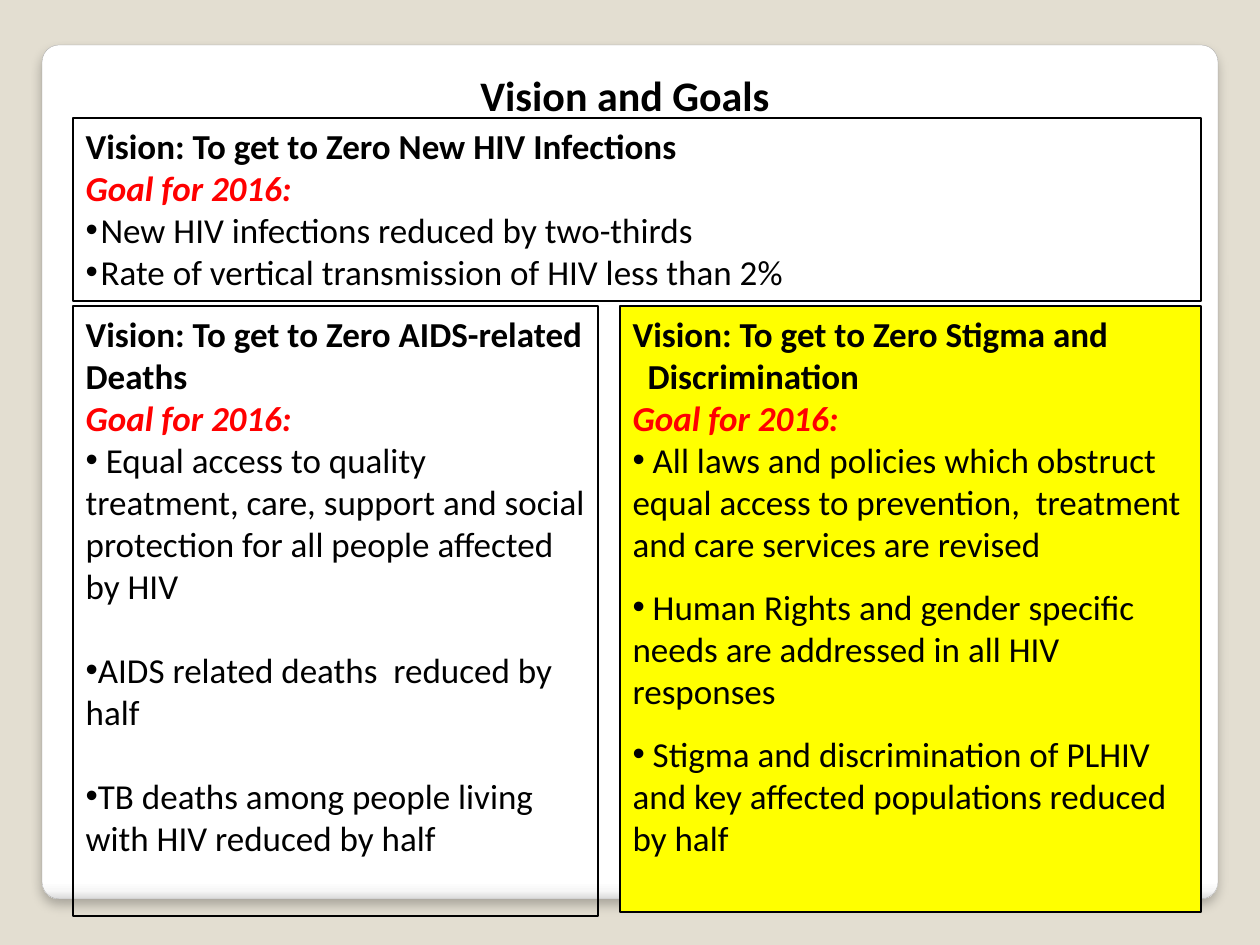
from lxml import etree
from pptx import Presentation
from pptx import util as u
from pptx.dml.color import RGBColor
from pptx.enum import shapes, text
from pptx.oxml import ns, parse_xml

PX = 914400 / 126
FONT = "Calibri"
COLORS = {
    "page": "E3DED1", "card": "FFFFFF", "card_low": "F7F7F7",
    "card_edge": "DADADA", "card_line": "A4A4A4",
    "ink": "000000", "goal": "FF0000", "highlight": "FFFF00",
}
GOAL = "Goal for 2016:"
HANG = 15

PANELS = [
    dict(idx=1, box=(73, 118, 1128, 183), head_hang=HANG, item_hang=HANG,
         gap=0, fill=None,
         vision="Vision: To get to Zero New HIV Infections",
         items=["New HIV infections reduced by two-thirds",
                "Rate of vertical transmission of HIV less than 2%"]),
    dict(idx=2, box=(73, 306, 525, 610), head_hang=0, item_hang=0,
         gap=24, fill=None,
         vision="Vision: To get to Zero AIDS-related Deaths",
         items=[" Equal access to quality treatment, care, support and social "
                "protection for all people affected by HIV",
                "AIDS related deaths  reduced by half",
                "TB deaths among people living with HIV reduced by half"]),
    dict(idx=3, box=(620, 306, 581, 606), head_hang=HANG, item_hang=0,
         gap=12, fill="highlight",
         vision="Vision: To get to Zero Stigma and Discrimination",
         items=[" All laws and policies which obstruct equal access to "
                "prevention,  treatment and care services are revised",
                " Human Rights and gender specific needs are addressed in "
                "all HIV responses",
                " Stigma and discrimination of PLHIV and key affected "
                "populations reduced by half"]),
]


def emu(px):
    return u.Emu(round(px * PX))


def rgb(name):
    return RGBColor.from_string(COLORS[name])


def place(sp, box):
    sp.left, sp.top, sp.width, sp.height = map(emu, box)


def add_run(p, words, size, color="ink", bold=False, italic=False):
    r = p.add_run()
    r.text = words
    r.font.name = FONT
    r.font.size = u.Pt(size)
    r.font.bold = bold
    r.font.italic = italic
    r.font.color.rgb = rgb(color)


def prepare_frame(sp, anchor):
    tf = sp.text_frame
    tf.word_wrap = True
    tf.auto_size = text.MSO_AUTO_SIZE.NONE
    tf.vertical_anchor = anchor
    return tf


def add_card(slide):
    sp = slide.shapes.add_shape(shapes.MSO_SHAPE.ROUNDED_RECTANGLE, 0, 0, 0, 0)
    place(sp, (42, 45, 1176, 854))
    sp.adjustments[0] = 0.02
    sp.line.color.rgb = rgb("card_line")
    sp.line.width = u.Pt(0.16)
    sp.fill.gradient()
    sp.fill.gradient_angle = 270
    stops = sp.element.spPr.find(".//" + ns.qn("a:gsLst"))
    for stop in list(stops):
        stops.remove(stop)
    for pos, name in ((0, "card"), (98, "card"), (99, "card_low"), (100, "card_edge")):
        gs = etree.SubElement(stops, ns.qn("a:gs"), pos=str(pos * 1000))
        etree.SubElement(gs, ns.qn("a:srgbClr"), val=COLORS[name])
    sp.element.spPr.append(parse_xml(
        f'<a:effectLst {ns.nsdecls("a")}>'
        f'<a:outerShdw blurRad="{u.Pt(6)}" dist="{u.Pt(4)}" dir="5400000" rotWithShape="0">'
        f'<a:srgbClr val="{COLORS["ink"]}"><a:alpha val="25000"/></a:srgbClr>'
        '</a:outerShdw></a:effectLst>'))
    slide.shapes[0].element.addprevious(sp.element)


def add_title(slide):
    sp = slide.shapes.title
    place(sp, (105, 63, 1040, 63))
    tf = prepare_frame(sp, text.MSO_ANCHOR.MIDDLE)
    p = tf.paragraphs[0]
    p.alignment = text.PP_ALIGN.CENTER
    add_run(p, "Vision and Goals", 24, bold=True)


def format_paragraph(p, hang, bullet=False, before=0):
    p.alignment = text.PP_ALIGN.LEFT
    p.space_before = u.Pt(before)
    p.space_after = u.Pt(0)
    pPr = p._p.get_or_add_pPr()
    pPr.set("marL", str(emu(hang)))
    pPr.set("indent", str(emu(-hang)))
    if bullet:
        etree.SubElement(pPr, ns.qn("a:buChar"), char="•")
    else:
        etree.SubElement(pPr, ns.qn("a:buNone"))


def fill_panel(sp, panel):
    place(sp, panel["box"])
    sp.line.color.rgb = rgb("ink")
    sp.line.width = u.Pt(1)
    if panel["fill"]:
        sp.fill.solid()
        sp.fill.fore_color.rgb = rgb(panel["fill"])
    else:
        sp.fill.background()
    tf = prepare_frame(sp, text.MSO_ANCHOR.TOP)
    p = tf.paragraphs[0]
    format_paragraph(p, panel["head_hang"])
    add_run(p, panel["vision"], 20, bold=True)
    p = tf.add_paragraph()
    format_paragraph(p, panel["head_hang"])
    add_run(p, GOAL, 20, "goal", bold=True, italic=True)
    for i, item in enumerate(panel["items"]):
        p = tf.add_paragraph()
        format_paragraph(p, panel["item_hang"], True, panel["gap"] if i else 0)
        add_run(p, item, 20)


def main():
    prs = Presentation()
    prs.slide_width, prs.slide_height = emu(1260), emu(945)
    slide = prs.slides.add_slide(prs.slide_layouts.get_by_name("Comparison"))
    slide.background.fill.solid()
    slide.background.fill.fore_color.rgb = rgb("page")
    bodies = {sp.placeholder_format.idx: sp for sp in slide.placeholders}
    add_card(slide)
    add_title(slide)
    for panel in PANELS:
        fill_panel(bodies[panel["idx"]], panel)
    spare = bodies[4].element
    spare.getparent().remove(spare)
    prs.save("out.pptx")


if __name__ == "__main__":
    main()
